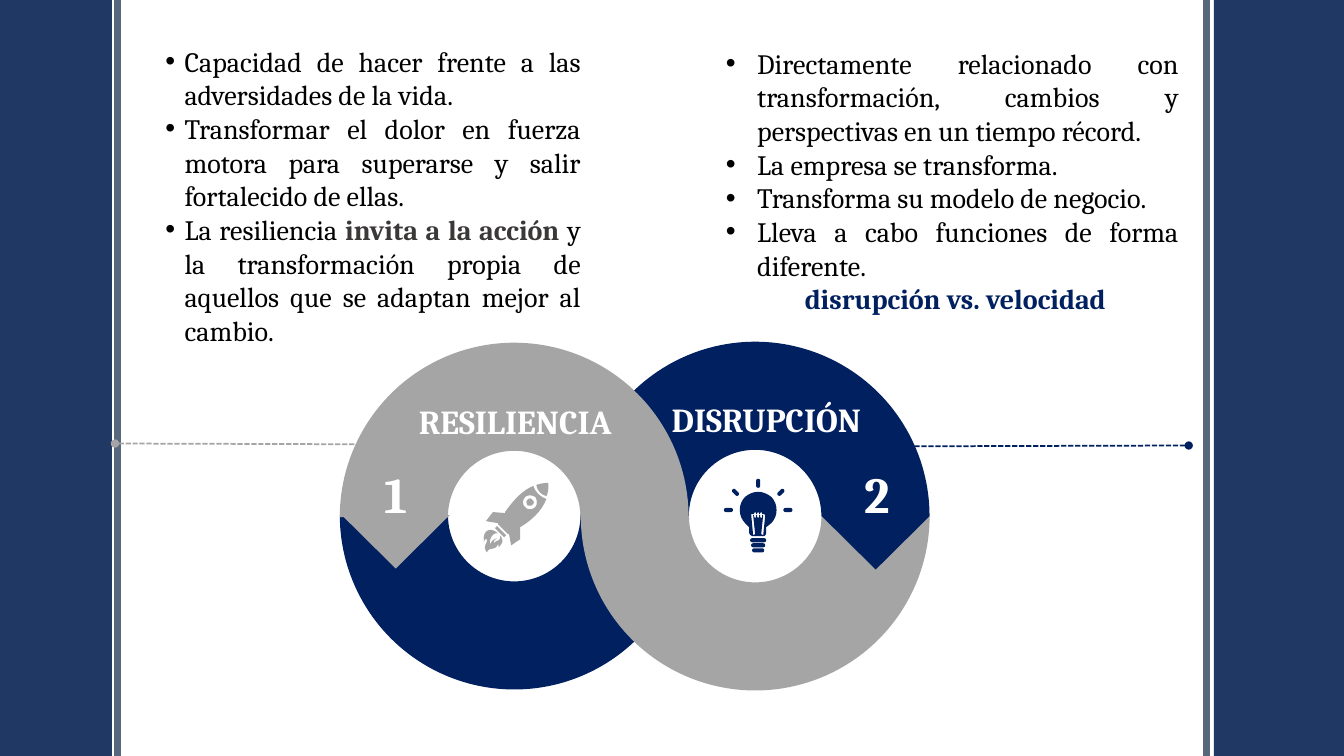
import math

import pptx
import pptx.util
import pptx.oxml
import pptx.oxml.ns
from pptx.dml.color import RGBColor
from pptx.enum.dml import MSO_LINE
from pptx.enum.shapes import MSO_CONNECTOR, MSO_SHAPE
from pptx.enum.text import MSO_ANCHOR, MSO_AUTO_SIZE, PP_ALIGN

Inches = pptx.util.Inches
Pt = pptx.util.Pt

FRAME_BLUE = RGBColor(0x20, 0x38, 0x64)
FRAME_GRAY = RGBColor(0x57, 0x68, 0x7C)
NAVY = RGBColor(0x00, 0x20, 0x60)
GRAY = RGBColor(0xA5, 0xA5, 0xA5)
DARK = RGBColor(0x3B, 0x38, 0x38)
BLACK = RGBColor(0, 0, 0)
WHITE = RGBColor(0xFF, 0xFF, 0xFF)

FONT = "Cambria"
WIDTH, HEIGHT = 13.33, 7.5
RING = 3.46

# Icon outlines, in hundredths of an inch from the icon's corner
ROCKET = [
    "M 16 50 C 13 49 7 53 8 61 C 10 57 12 56 15 55 C 14 56 11 57 12 60 "
    "C 14 56 19 59 18 52 C 23 59 19 60 17 64 C 16 63 17 59 16 61 "
    "C 13 68 7 63 5 69 C 0 63 6 60 5 56 C 4 56 3 55 2 59 C 0 44 11 45 16 50",
    "M 15 43 L 24 52 L 22 54 L 13 45",
    "M 50 17 C 52 18 52 20 50 22 C 49 23 47 23 45 22 C 44 20 44 18 45 17 C 47 15 49 15 50 17",
    "M 53 14 C 50 12 45 12 43 14 C 40 17 40 22 43 24 C 45 27 50 27 53 24 C 55 22 55 17 53 14",
    "M 51 3 C 53 9 58 14 64 16 C 59 29 48 38 38 44 L 38 56 L 29 62 L 27 51 L 26 51 "
    "L 16 41 L 16 40 L 4 38 L 11 29 L 23 30 L 23 29 C 30 19 39 8 51 3",
    "M 66 0 C 66 5 66 10 64 13 C 59 12 55 8 54 2 C 57 1 62 0 66 0",
]
BULB = [
    "M 34 13 C 39 13 43 15 47 18 C 54 25 54 37 47 44 L 42 48 L 42 53 C 42 55 41 57 39 57 "
    "L 29 57 C 27 57 25 55 25 53 L 25 48 L 21 44 C 14 37 14 25 21 18 C 25 15 29 13 34 13",
    "M 30 34 L 30 35 L 27 35 L 29 56 L 31 55 L 29 36 L 30 36 L 30 38 L 31 39 L 32 38 "
    "L 32 36 L 33 36 L 33 38 L 34 39 L 35 38 L 35 36 L 36 36 L 36 38 L 37 39 L 38 38 "
    "L 38 36 L 39 36 L 37 55 L 39 56 L 41 36 L 40 35 L 38 35 L 38 34 L 37 33 L 36 34 "
    "L 36 35 L 35 35 L 35 34 L 34 33 L 33 34 L 33 35 L 32 35 L 32 34 L 31 33",
]
# Rays and base bars of the bulb: the two ends of each rounded stroke
BULB_STROKES = [(30, 71, 38, 71), (29, 66, 39, 66), (28, 61, 40, 61),
                (2, 31, 7, 31), (61, 31, 66, 31), (34, 2, 34, 7),
                (10, 12, 13, 15), (58, 12, 55, 15)]

RESILIENCE = [
    [("Capacidad de hacer frente a las adversidades de la vida.", BLACK, False)],
    [("Transformar el dolor en fuerza motora para superarse y salir fortalecido de ellas.",
      BLACK, False)],
    [("La resiliencia ", BLACK, False), ("invita a la acción ", DARK, True),
     ("y la transformación propia de aquellos que se adaptan mejor al cambio.", BLACK, False)],
]
DISRUPTION = [[(text, BLACK, False)] for text in (
    "Directamente relacionado con transformación, cambios y perspectivas en un tiempo récord.",
    "La empresa se transforma.",
    "Transforma su modelo de negocio.",
    "Lleva a cabo funciones de forma diferente.")]


def style_run(run, size, color, bold):
    run.font.name, run.font.size, run.font.bold = FONT, Pt(size), bold
    run.font.color.rgb = color


def fill_plain(shape, color):
    shape.shadow.inherit = False
    shape.fill.solid()
    shape.fill.fore_color.rgb = color
    shape.line.fill.background()


def add_filled(slide, kind, box, color, rotation=0):
    shape = slide.shapes.add_shape(kind, *map(Inches, box))
    fill_plain(shape, color)
    shape.rotation = rotation
    return shape


def add_line(slide, start, end, color, width):
    line = slide.shapes.add_connector(MSO_CONNECTOR.STRAIGHT, *map(Inches, start + end))
    line.line.color.rgb = color
    line.line.width = Pt(width)
    line._element.spPr.append(pptx.oxml.parse_xml(
        "<a:effectLst %s/>" % pptx.oxml.ns.nsdecls("a")))
    return line


def add_text_box(slide, box):
    text_box = slide.shapes.add_textbox(*map(Inches, box))
    text_frame = text_box.text_frame
    text_frame.word_wrap = True
    text_frame.auto_size = MSO_AUTO_SIZE.SHAPE_TO_FIT_TEXT
    return text_frame


def add_label(slide, box, text, size, anchor=MSO_ANCHOR.TOP):
    text_frame = add_text_box(slide, box)
    text_frame.vertical_anchor = anchor
    text_frame.text = text
    paragraph = text_frame.paragraphs[0]
    paragraph.alignment = PP_ALIGN.CENTER
    style_run(paragraph.runs[0], size, WHITE, True)


def outline_points(outline):
    """Turn an outline into points, sampling its Bézier curves."""
    tokens = iter(outline.split())
    points = []
    for command in tokens:
        pairs = [(float(next(tokens)), float(next(tokens)))
                 for _ in range(3 if command == "C" else 1)]
        if command == "C":
            corners = [points[-1]] + pairs
            for step in range(1, 9):
                t = step / 8
                weights = [math.comb(3, k) * t ** k * (1 - t) ** (3 - k) for k in range(4)]
                points.append(tuple(sum(w * c[axis] for w, c in zip(weights, corners))
                                    for axis in (0, 1)))
        else:
            points += pairs
    return points


def stroke_points(x1, y1, x2, y2, radius=2):
    """Outline of a stroke with round ends."""
    heading = math.atan2(y2 - y1, x2 - x1)
    points = []
    for x, y, turn in ((x2, y2, -math.pi / 2), (x1, y1, math.pi / 2)):
        angles = [heading + turn + math.pi * step / 8 for step in range(9)]
        points += [(x + radius * math.cos(a), y + radius * math.sin(a)) for a in angles]
    return points


def add_icon(slide, left, top, contours, color):
    placed = [[(Inches(left + x / 100), Inches(top + y / 100)) for x, y in contour]
              for contour in contours]
    builder = slide.shapes.build_freeform(*placed[0][0], scale=1.0)
    for index, contour in enumerate(placed):
        if index:
            builder.move_to(*contour[0])
        builder.add_line_segments(contour[1:], close=True)
    fill_plain(builder.convert_to_shape(), color)


def add_frame(slide, width, height):
    for left, bar_width in ((width - 1.29, 1.29), (0, 1.11)):
        add_filled(slide, MSO_SHAPE.RECTANGLE, (left, 0, bar_width, height), FRAME_BLUE)
    for x in (1.17, width - 1.36):
        add_line(slide, (x, 0), (x, height), FRAME_GRAY, 5)


def add_loop(slide, left, top):
    # Half rings: the gray ones cross over the navy ones
    right = left + 2.39
    for x, y, color, rotation in ((right, top + 0.01, NAVY, 0), (left, top, NAVY, 180),
                                  (right, top + 0.01, GRAY, 180), (left, top + 0.02, GRAY, 0)):
        arc = add_filled(slide, MSO_SHAPE.BLOCK_ARC, (x, y, RING, RING), color, rotation)
        for index, value in enumerate((108, 0, 0.31)):
            arc.adjustments[index] = value
    # Arrow tips, numbers and titles
    for x, y, color in ((left + 0.02, top + 1.73, GRAY), (left + 4.78, top + 1.74, NAVY)):
        add_filled(slide, MSO_SHAPE.ISOSCELES_TRIANGLE, (x, y, 1.07, 0.53), color, 180)
    for x, number in ((left + 0.28, "1"), (left + 5.06, "2")):
        add_label(slide, (x, top + 1.12, 0.55, 0.78), number, 36, MSO_ANCHOR.MIDDLE)
    add_label(slide, (left + 0.49, top + 0.55, 2.5, 0.5), "RESILIENCIA", 24)
    add_label(slide, (left + 2.98, top + 0.53, 2.5, 0.5), "DISRUPCIÓN", 24)
    # Icons
    add_icon(slide, left + 1.41, top + 1.41, [outline_points(o) for o in ROCKET], GRAY)
    bulb = [outline_points(o) for o in BULB] + [stroke_points(*s) for s in BULB_STROKES]
    add_icon(slide, left + 3.81, top + 1.37, bulb, NAVY)
    # Dashed leaders with a dot at the outer end
    for start, end, color in (((left - 2.23, top + 1.02), (left + 0.96, top + 1.03), GRAY),
                              ((left + 8.42, top + 1.04), (left + 4.91, top + 1.05), NAVY)):
        leader = add_line(slide, start, end, color, 1.25)
        leader.line.dash_style = MSO_LINE.SQUARE_DOT
        leader.line._get_or_add_ln().append(pptx.oxml.parse_xml(
            '<a:headEnd %s type="oval"/>' % pptx.oxml.ns.nsdecls("a")))


def add_bullets(slide, box, items, indent, closing=None):
    text_frame = add_text_box(slide, box)
    text_frame.margin_left = text_frame.margin_right = 0
    text_frame.margin_top = text_frame.margin_bottom = 0
    rows = items + ([[(closing, NAVY, True)]] if closing else [])
    for index, pieces in enumerate(rows):
        paragraph = text_frame.add_paragraph() if index else text_frame.paragraphs[0]
        for text, color, bold in pieces:
            run = paragraph.add_run()
            run.text = text
            style_run(run, 20, color, bold)
        if index == len(items):
            paragraph.alignment = PP_ALIGN.CENTER
            continue
        paragraph.alignment = PP_ALIGN.JUSTIFY
        properties = paragraph._p.get_or_add_pPr()
        properties.set("marL", str(Inches(indent)))
        properties.set("indent", str(-Inches(indent)))
        for tag in ('buFont %s typeface="Arial"', 'buChar %s char="•"'):
            properties.append(pptx.oxml.parse_xml(
                "<a:" + tag % pptx.oxml.ns.nsdecls("a") + "/>"))


def main():
    presentation = pptx.Presentation()
    presentation.slide_width, presentation.slide_height = Inches(WIDTH), Inches(HEIGHT)
    slide = presentation.slides.add_slide(presentation.slide_layouts[6])
    add_frame(slide, WIDTH, HEIGHT)
    add_loop(slide, 3.37, 3.38)
    add_bullets(slide, (1.64, 0.44, 4.12, 3.03), RESILIENCE, 0.19)
    add_bullets(slide, (7.2, 0.46, 4.49, 2.69), DISRUPTION, 0.31, " disrupción vs. velocidad")
    presentation.save("out.pptx")


if __name__ == "__main__":
    main()
